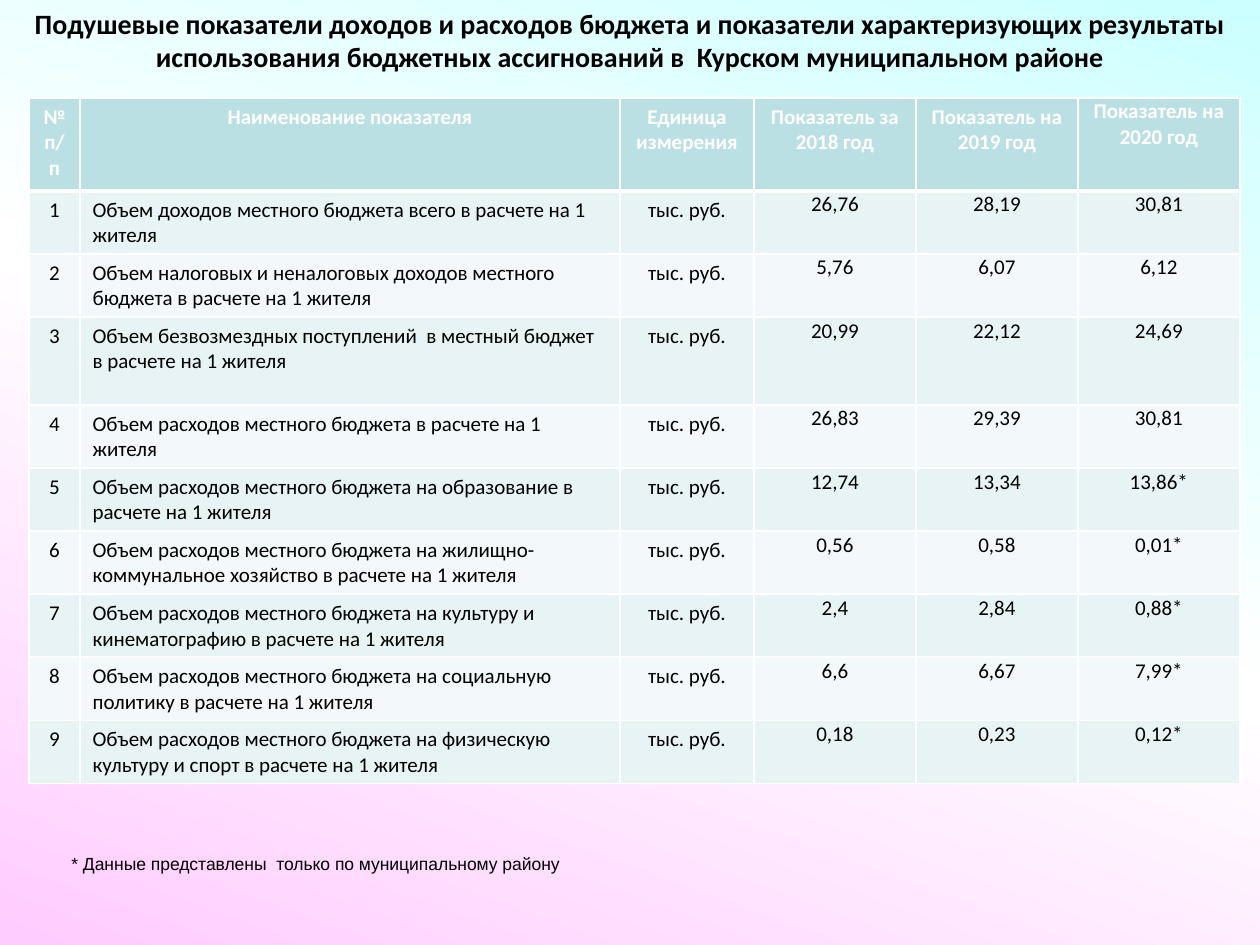
from copy import deepcopy

from lxml import etree
from pptx import Presentation
from pptx.dml.color import RGBColor
from pptx.enum.text import MSO_ANCHOR, MSO_AUTO_SIZE, PP_ALIGN
from pptx.oxml.ns import qn
from pptx.util import Emu, Pt

TOP = MSO_ANCHOR.TOP
GROW = MSO_AUTO_SIZE.SHAPE_TO_FIT_TEXT
LEFT, CENTER = PP_ALIGN.LEFT, PP_ALIGN.CENTER
PX = 914400 // 126  # EMU per px

TITLE = ("Подушевые показатели доходов и расходов бюджета и показатели характеризующих "
         "результаты использования бюджетных ассигнований в  Курском муниципальном районе")
FOOTNOTE = "* Данные представлены  только по муниципальному району"
HEADINGS = ["№ п/п", "Наименование показателя", "Единица измерения",
            "Показатель за 2018 год", "Показатель на 2019 год", "Показатель на 2020 год"]
INDICATORS = [
    ("Объем доходов местного бюджета всего в расчете на 1 жителя", "26,76", "28,19", "30,81"),
    ("Объем налоговых и неналоговых доходов местного бюджета в расчете на 1 жителя",
     "5,76", "6,07", "6,12"),
    ("Объем безвозмездных поступлений  в местный бюджет в расчете на 1 жителя",
     "20,99", "22,12", "24,69"),
    ("Объем расходов местного бюджета в расчете на 1 жителя", "26,83", "29,39", "30,81"),
    ("Объем расходов местного бюджета на образование в расчете на 1 жителя",
     "12,74", "13,34", "13,86*"),
    ("Объем расходов местного бюджета на жилищно-коммунальное хозяйство в расчете на 1 жителя",
     "0,56", "0,58", "0,01*"),
    ("Объем расходов местного бюджета на культуру и кинематографию в расчете на 1 жителя",
     "2,4", "2,84", "0,88*"),
    ("Объем расходов местного бюджета на социальную политику в расчете на 1 жителя",
     "6,6", "6,67", "7,99*"),
    ("Объем расходов местного бюджета на физическую культуру и спорт в расчете на 1 жителя",
     "0,18", "0,23", "0,12*"),
]
COLUMN_WIDTHS = [51, 540, 134, 162, 162, 162]
ROW_HEIGHTS = [93, 63, 63, 88, 63, 63, 63, 63, 63, 63]
HEADER_FILL, ODD_FILL, EVEN_FILL = "BBE0E3", "E7F3F4", "F3F9FA"


def rgb(value):
    return RGBColor.from_string(value)


def write(frame, text, size, font, color, bold=False, align=LEFT):
    frame.text = text
    frame.word_wrap = True
    paragraph = frame.paragraphs[0]
    paragraph.alignment = align
    run_font = paragraph.runs[0].font
    run_font.size = Pt(size)
    run_font.name = font
    run_font.bold = bold
    run_font.color.rgb = rgb(color)


prs = Presentation()
prs.slide_width, prs.slide_height = Emu(1260 * PX), Emu(945 * PX)
slide = prs.slides.add_slide(prs.slide_layouts[5])

# Background gradient with a third stop
backdrop = slide.background.fill
backdrop.gradient()
backdrop.gradient_angle = 250
stop_list = slide.element.find(".//" + qn("a:gsLst"))
stop_list.append(deepcopy(stop_list[0]))
for stop, position, color in zip(backdrop.gradient_stops, (0, 0.5, 1),
                                 ("CCFFFF", "FFFFFF", "FFCCFF")):
    stop.position = position
    stop.color.rgb = rgb(color)

title = slide.shapes.title
title.left, title.top, title.width, title.height = 0, 0, Emu(1260 * PX), Emu(81 * PX)
write(title.text_frame, TITLE, 16, "Calibri", "000000", bold=True, align=CENTER)
title.text_frame.vertical_anchor = TOP
title.text_frame.auto_size = GROW

# Table of indicators
rows = [HEADINGS] + [
    [str(number), name, "тыс. руб.", *values]
    for number, (name, *values) in enumerate(INDICATORS, 1)
]
table = slide.shapes.add_table(len(rows), len(HEADINGS), 29 * PX, 98 * PX,
                               sum(COLUMN_WIDTHS) * PX, sum(ROW_HEIGHTS) * PX).table
for column, width in zip(table.columns, COLUMN_WIDTHS):
    column.width = Emu(width * PX)
for row, height in zip(table.rows, ROW_HEIGHTS):
    row.height = Emu(height * PX)

for r, texts in enumerate(rows):
    header = r == 0
    fill = HEADER_FILL if header else ODD_FILL if r % 2 else EVEN_FILL
    for c, text in enumerate(texts):
        cell = table.cell(r, c)
        write(cell.text_frame, text, 12, "Calibri", "FFFFFF" if header else "000000",
              bold=header, align=LEFT if c == 1 and not header else CENTER)
        if c == 5 or (c > 2 and not header):
            cell.margin_left = cell.margin_top = cell.margin_right = Emu(PX)
            cell.margin_bottom = 0
        cell.fill.solid()
        cell.fill.fore_color.rgb = rgb(fill)

        # Border lines stand before the fill in the cell properties
        properties = cell.fill._xPr
        for place, side in enumerate(("lnL", "lnR", "lnT", "lnB")):
            under_header = (r, side) in ((0, "lnB"), (1, "lnT"))
            line = etree.Element(qn("a:" + side), w=str(Pt(3 if under_header else 1)))
            line_fill = etree.SubElement(line, qn("a:solidFill"))
            etree.SubElement(line_fill, qn("a:srgbClr"), val="FFFFFF")
            properties.insert(place, line)

footnote = slide.shapes.add_textbox(59 * PX, 847 * PX, 965 * PX, 34 * PX)
write(footnote.text_frame, FOOTNOTE, 10, "Arial", "000000")
footnote.text_frame.auto_size = GROW

prs.save("out.pptx")
